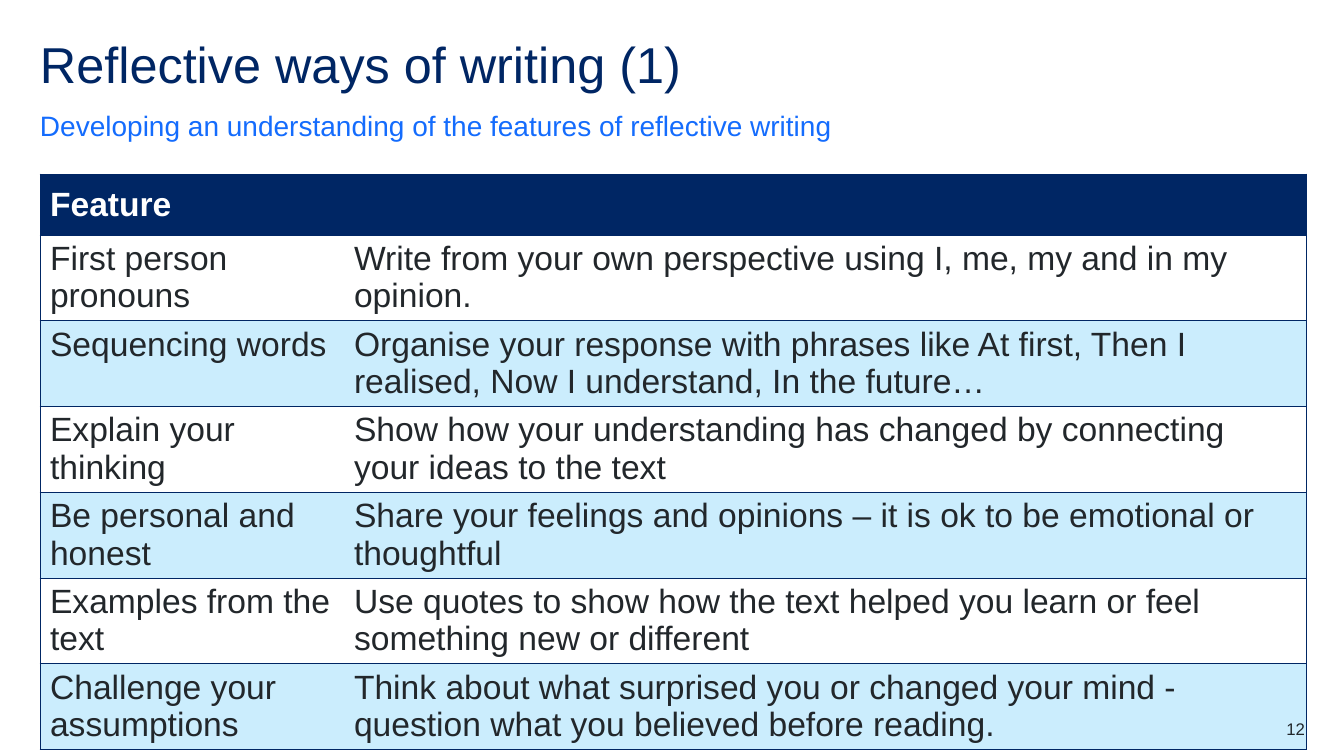
import pptx
import pptx.dml.color
import pptx.enum.text
import pptx.oxml.ns
import pptx.util
import lxml.etree

PX = 9071  # 100.8 px to the inch
FONT = "Arial"
COLORS = {
    "navy": "002664",
    "blue": "146CFD",
    "pale": "CBEDFD",
    "ink": "22272B",
    "white": "FFFFFF",
}
ANCHOR = pptx.enum.text.MSO_ANCHOR
ALIGN = pptx.enum.text.PP_ALIGN

LEFT, WIDTH = 40, 1266
COLUMN_WIDTHS = (304, 962)
HEADER_HEIGHT, ROW_HEIGHT = 61, 85

FEATURES = [
    ("Feature", ""),
    ("First person pronouns",
     "Write from your own perspective using I, me, my and in my opinion."),
    ("Sequencing words",
     "Organise your response with phrases like At first, Then I realised, "
     "Now I understand, In the future…"),
    ("Explain your thinking",
     "Show how your understanding has changed by connecting your ideas to the text"),
    ("Be personal and honest",
     "Share your feelings and opinions – it is ok to be emotional or thoughtful"),
    ("Examples from the text",
     "Use quotes to show how the text helped you learn or feel something new or different"),
    ("Challenge your assumptions",
     "Think about what surprised you or changed your mind - question what you "
     "believed before reading."),
]


def px(length):
    return pptx.util.Emu(length * PX)


def rgb(name):
    return pptx.dml.color.RGBColor.from_string(COLORS[name])


def format_para(para, size, color, bold=False, space_after=0):
    para.space_before = pptx.util.Pt(0)
    para.space_after = pptx.util.Pt(space_after)
    for span in para.runs:
        span.font.name = FONT
        span.font.size = pptx.util.Pt(size)
        span.font.bold = bold
        span.font.color.rgb = rgb(color)


def add_text(page, place, text, size, color, anchor=ANCHOR.TOP, align=ALIGN.LEFT,
             line_spacing=1.0, space_after=0):
    box = page.shapes.add_textbox(*map(px, place))
    frame = box.text_frame
    frame.word_wrap = True
    frame.vertical_anchor = anchor
    frame.margin_left = frame.margin_right = frame.margin_top = frame.margin_bottom = 0
    frame.text = text
    para = frame.paragraphs[0]
    para.alignment = align
    para.line_spacing = line_spacing
    format_para(para, size, color, space_after=space_after)


def set_borders(cell, visible_sides):
    properties = cell._tc.get_or_add_tcPr()
    qn = pptx.oxml.ns.qn
    for side in "LRTB":
        line = lxml.etree.SubElement(properties, qn(f"a:ln{side}"), w="6350")
        if side in visible_sides:
            fill = lxml.etree.SubElement(line, qn("a:solidFill"))
            lxml.etree.SubElement(fill, qn("a:srgbClr"), val=COLORS["navy"])
        else:
            lxml.etree.SubElement(line, qn("a:noFill"))


def fill_cell(cell, text, is_header, background):
    cell.fill.solid()
    cell.fill.fore_color.rgb = rgb(background)
    cell.vertical_anchor = ANCHOR.MIDDLE if is_header else ANCHOR.TOP
    if not is_header:
        cell.margin_bottom = 0
    cell.text = text
    format_para(cell.text_frame.paragraphs[0], 24,
                "white" if is_header else "ink", is_header)


def add_feature_table(page, top):
    height = HEADER_HEIGHT + ROW_HEIGHT * (len(FEATURES) - 1)
    table = page.shapes.add_table(len(FEATURES), len(COLUMN_WIDTHS),
                                  px(LEFT), px(top), px(WIDTH), px(height)).table
    for column, width in zip(table.columns, COLUMN_WIDTHS):
        column.width = px(width)
    for row_index, texts in enumerate(FEATURES):
        is_header = row_index == 0
        table.rows[row_index].height = px(HEADER_HEIGHT if is_header else ROW_HEIGHT)
        if is_header:
            background = "navy"
        else:
            background = "white" if row_index % 2 else "pale"
        for column_index, text in enumerate(texts):
            cell = table.cell(row_index, column_index)
            # Outer frame and row rules only, no rule between the columns
            set_borders(cell, "LTB" if column_index == 0 else "RTB")
            fill_cell(cell, text, is_header, background)


def main():
    deck = pptx.Presentation()
    deck.slide_width, deck.slide_height = px(1344), px(756)
    page = deck.slides.add_slide(deck.slide_layouts[6])

    # Heading
    add_text(page, (LEFT, 40, WIDTH, 60), "Reflective ways of writing (1)",
             36, "navy", line_spacing=0.9)
    add_text(page, (LEFT, 108, WIDTH, 34),
             "Developing an understanding of the features of reflective writing",
             20, "blue", anchor=ANCHOR.BOTTOM, line_spacing=1.5, space_after=12)

    # Features of reflective writing
    add_feature_table(page, 174)

    # Page number
    add_text(page, (1226, 719, 79, 20), "12", 12, "ink", align=ALIGN.RIGHT)

    deck.save("out.pptx")


if __name__ == "__main__":
    main()
